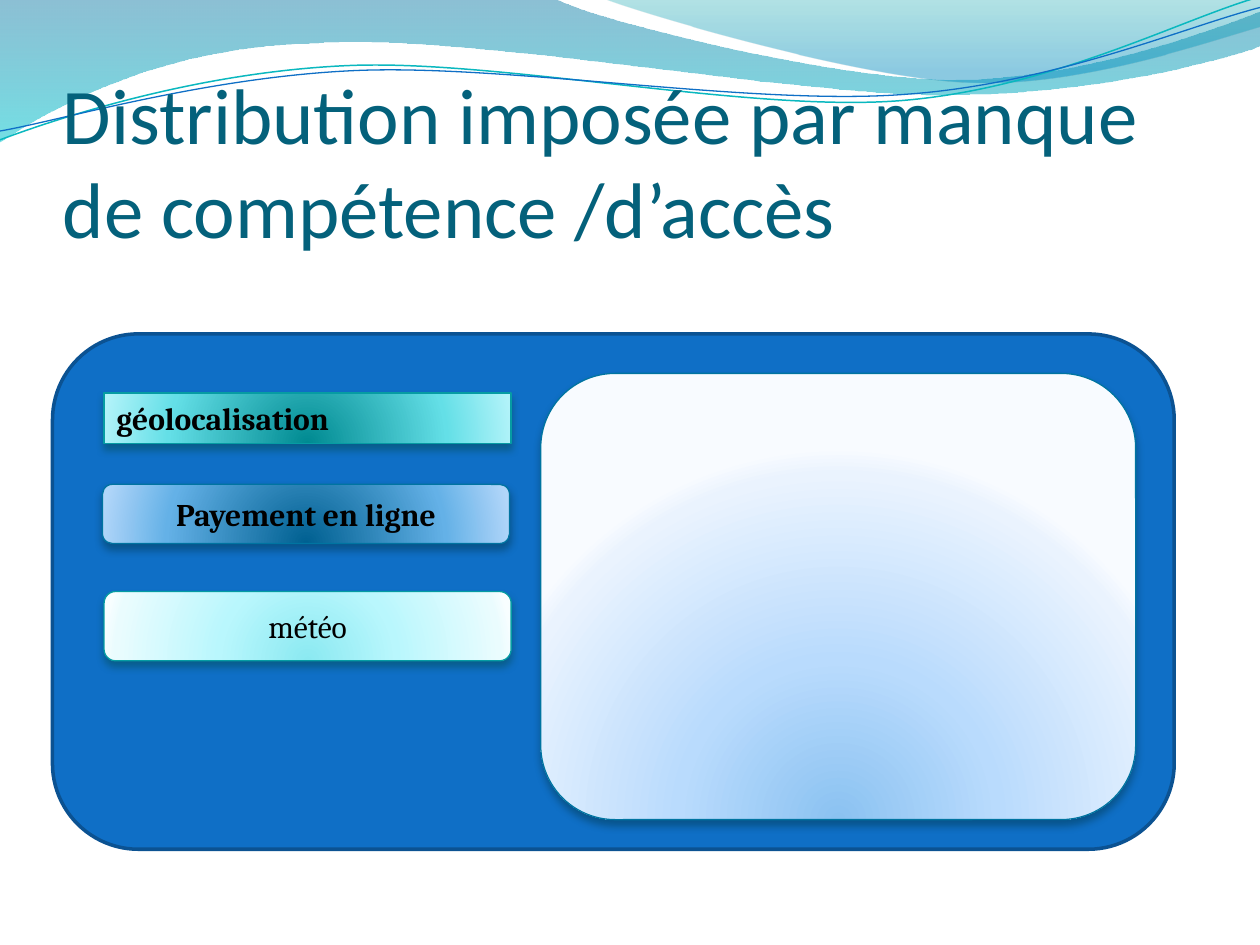
from math import cos, radians, sin

from lxml import etree
from pptx import Presentation
from pptx.dml.color import RGBColor
from pptx.enum.shapes import MSO_SHAPE
from pptx.enum.text import MSO_ANCHOR, MSO_AUTO_SIZE, PP_ALIGN
from pptx.oxml import parse_xml
from pptx.oxml.ns import qn
from pptx.util import Pt

RECTANGLE, ROUNDED = MSO_SHAPE.RECTANGLE, MSO_SHAPE.ROUNDED_RECTANGLE
TOP, MIDDLE, BOTTOM = MSO_ANCHOR.TOP, MSO_ANCHOR.MIDDLE, MSO_ANCHOR.BOTTOM
LEFT, CENTER = PP_ALIGN.LEFT, PP_ALIGN.CENTER
GROW = MSO_AUTO_SIZE.SHAPE_TO_FIT_TEXT
NAMESPACE = "http://schemas.openxmlformats.org/drawingml/2006/main"
LINEAR = '<a:lin ang="5400000" scaled="1"/>'
RADIAL = ('<a:path path="circle"><a:fillToRect l="50000" t="130000" '
          'r="50000" b="-30000"/></a:path>')
TILT = 2.7  # degrees the thin lines are turned counter-clockwise

color = RGBColor.from_string


def set_gradient(shape, stops, direction):
    """Fill with (position %, colour, opacity %) stops."""
    shape.fill.gradient()
    old = shape._element.spPr.find(qn("a:gradFill"))
    stop_xml = "".join(
        f'<a:gs pos="{position * 1000}"><a:srgbClr val="{rgb}">'
        f'<a:alpha val="{opacity * 1000}"/></a:srgbClr></a:gs>'
        for position, rgb, opacity in stops)
    old.getparent().replace(old, parse_xml(
        f'<a:gradFill xmlns:a="{NAMESPACE}" rotWithShape="1">'
        f'<a:gsLst>{stop_xml}</a:gsLst>{direction}</a:gradFill>'))


def add_curve(segments, center, closed):
    """Draw points (2 numbers) and cubic curves (6 numbers), given in inches."""
    angle = radians(TILT) if center else 0
    center_x, center_y = center or (0, 0)
    points = []
    for segment in segments:
        for x, y in zip(segment[::2], segment[1::2]):
            dx, dy = x - center_x, y - center_y
            points.append((Pt(72 * (center_x + dx * cos(angle) - dy * sin(angle))),
                           Pt(72 * (center_y + dx * sin(angle) + dy * cos(angle)))))
    builder = slide.shapes.build_freeform(*points[0])
    builder.add_line_segments(points[1:], close=closed)
    curve = builder.convert_to_shape()
    # Join each three points of a cubic curve into one Bézier segment
    lines = iter(list(curve._element.iter(qn("a:lnTo"))))
    for segment in segments[1:]:
        line = next(lines)
        if len(segment) == 6:
            line.addprevious(bezier := etree.Element(qn("a:cubicBezTo")))
            for part in (line, next(lines), next(lines)):
                bezier.append(part[0])
                part.getparent().remove(part)
    curve.rotation = -TILT if center else 0
    return curve


presentation = Presentation()
presentation.slide_width, presentation.slide_height = Pt(720), Pt(540)
slide = presentation.slides.add_slide(presentation.slide_layouts[6])

# Filled waves at the top
waves = [
    ([(0, 0), (4.4, -0.01), (4.76, 0.17, 6.64, 0.63, 7.58, 0.63),
      (8.53, 0.63, 9.58, 0.26, 10, 0.09), (10.01, 0.36),
      (9.83, 0.44, 8.7, 0.76, 7.46, 0.75), (6.22, 0.75, 3.82, 0.28, 2.57, 0.34),
      (1.29, 0.36, 0.46, 0.83, -0.01, 1.13), (0, 0)],
     [(0, "0074A1", 45), (100, "00C6CF", 55)]),
    ([(4.79, -0.01), (5.09, 0.11, 6.82, 0.62, 7.69, 0.65),
      (8.56, 0.69, 9.61, 0.32, 10, 0.21), (10, 0), (4.79, -0.01)],
     [(0, "00A1A9", 30), (80, "008BBF", 45)]),
]
for segments, stops in waves:
    wave = add_curve(segments, None, True)
    wave.shadow.inherit = False
    set_gradient(wave, stops, LINEAR)
    wave.line.fill.background()

# Thin lines along the waves
thin_lines = [
    ([(0, 1.11), (0.48, 0.93, 1.58, 0.57, 2.77, 0.52),
      (3.95, 0.47, 5.93, 0.89, 7.13, 0.8), (8.33, 0.71, 9.38, 0.15, 9.98, -0.02)],
     (4.99, 0.57), "0AB8BF", 0.85),
    ([(0, 1.04), (0.47, 0.96, 1.64, 0.61, 2.83, 0.56),
      (4.03, 0.51, 5.97, 0.84, 7.17, 0.75), (8.36, 0.67, 9.41, 0.21, 10, 0.06)],
     (5, 0.59), "0F6FC6", 0.75),
]
for segments, center, line_color, line_width in thin_lines:
    thin_line = add_curve(segments, center, False)
    thin_line.shadow.inherit = False
    thin_line.fill.background()
    thin_line.line.color.rgb = color(line_color)
    thin_line.line.width = Pt(line_width)

# Title
title = slide.shapes.add_textbox(Pt(36), Pt(55.44), Pt(648), Pt(90))
frame = title.text_frame
frame.word_wrap = True
frame.vertical_anchor = BOTTOM
frame.margin_left = frame.margin_right = frame.margin_bottom = 0
frame.margin_top = Pt(3.6)
paragraph = frame.paragraphs[0]
paragraph.text = "Distribution imposée par manque de compétence /d’accès"
paragraph.font.name, paragraph.font.size = "Calibri", Pt(45)
paragraph.font.color.rgb = color("04617B")

# Blue container
container = slide.shapes.add_shape(ROUNDED, Pt(30), Pt(190.8), Pt(641), Pt(294.5))
container.shadow.inherit = False
container.fill.solid()
container.fill.fore_color.rgb = color("0F6FC6")
container.line.color.rgb = color("0B5292")
container.line.width = Pt(2)

# Service boxes and the large panel
STRONG, SOFT = (0, 68, 100), (0, 43, 93, 100)
TEAL, BLUE = ("069CA3", "024B4E"), ("0074A1", "00374C")  # line, shadow
boxes = [
    ("géolocalisation", RECTANGLE, (59.5, 224.6, 232.6, 29), STRONG,
     ("008A91", "64DFE7", "B1F3F9"), TEAL, True, LEFT, TOP),
    ("Payement en ligne", ROUNDED, (58.6, 276.8, 232.6, 33.8), STRONG,
     ("006091", "64B1E7", "B1D6F9"), BLUE, True, CENTER, MIDDLE),
    ("météo", ROUNDED, (59.5, 338, 232.6, 39.6), SOFT,
     ("8BE9F1", "B9F7FD", "EAFCFE", "F8FEFF"), TEAL, False, CENTER, MIDDLE),
    ("", ROUNDED, (309, 213.4, 340, 255), SOFT,
     ("8BC2F1", "B9DBFD", "EAF3FE", "F8FBFF"), BLUE, False, CENTER, MIDDLE),
]
for text, kind, bounds, positions, colors, edge, bold, alignment, anchor in boxes:
    box = slide.shapes.add_shape(kind, *map(Pt, bounds))
    set_gradient(box, [(position, rgb, 100) for position, rgb in zip(positions, colors)],
                 RADIAL)
    line_color, shadow_color = edge
    box.line.color.rgb = color(line_color)
    box.line.width = Pt(0.75)
    # Soft shadow below the box
    box.shadow.inherit = False
    effects = box._element.spPr.find(qn("a:effectLst"))
    shadow = etree.SubElement(effects, qn("a:outerShdw"), blurRad=str(Pt(4.5)),
                              dist=str(Pt(3)), dir="5400000", rotWithShape="0")
    shade = etree.SubElement(shadow, qn("a:srgbClr"), val=shadow_color)
    etree.SubElement(shade, qn("a:alpha"), val="48000")
    if text:
        frame = box.text_frame
        frame.word_wrap = True
        frame.vertical_anchor = anchor
        if anchor == TOP:
            frame.auto_size = GROW
        paragraph = frame.paragraphs[0]
        paragraph.text = text
        paragraph.alignment = alignment
        paragraph.font.name, paragraph.font.size = "Cambria", Pt(18)
        paragraph.font.bold = bold
        paragraph.font.color.rgb = color("000000")

presentation.save("out.pptx")
